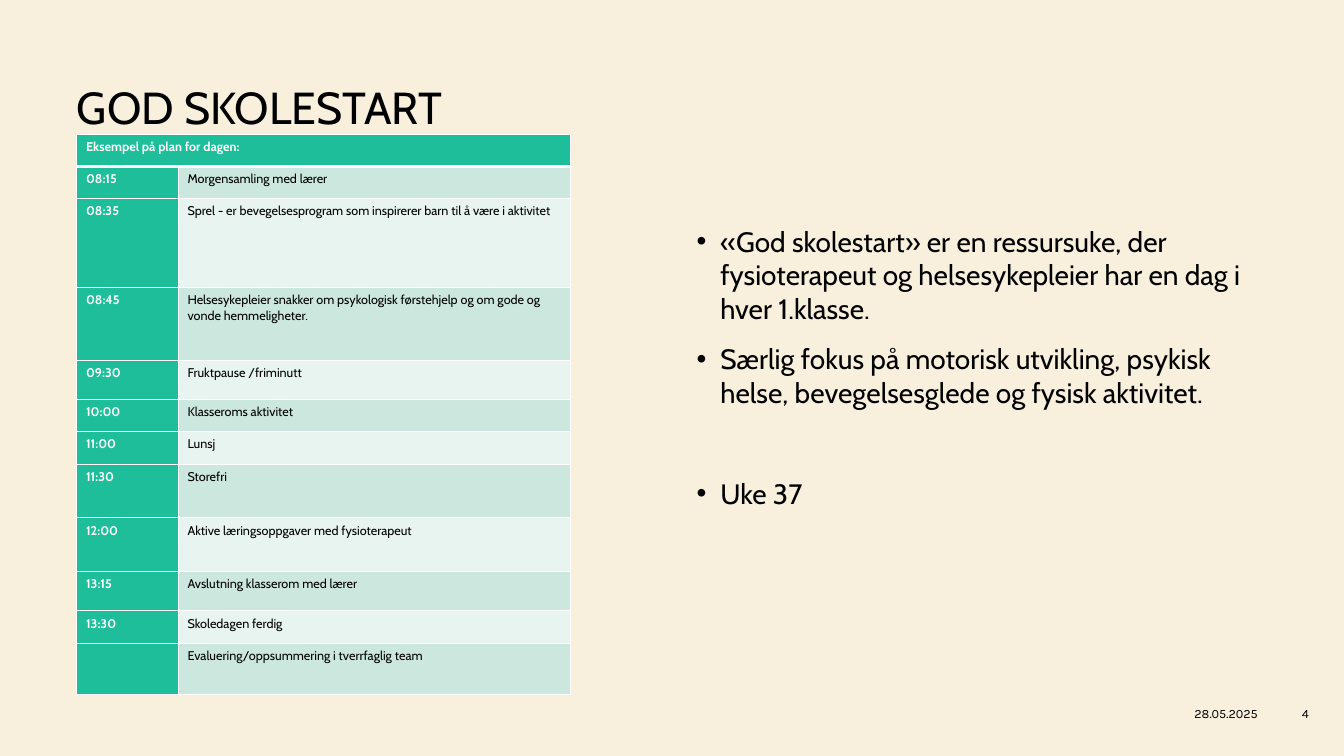
from dataclasses import dataclass

from lxml.etree import SubElement
from pptx import Presentation
from pptx.dml.color import RGBColor
from pptx.enum.text import MSO_ANCHOR, PP_ALIGN
from pptx.oxml.ns import qn
from pptx.slide import Slide
from pptx.table import _Cell
from pptx.text.text import TextFrame, _Paragraph
from pptx.util import Pt

CREAM = RGBColor(0xF8, 0xF0, 0xDD)
GREEN = RGBColor(0x1E, 0xBE, 0x9B)
MINT = RGBColor(0xCC, 0xE8, 0xDE)
PALE_MINT = RGBColor(0xE7, 0xF4, 0xEF)
BLACK = RGBColor(0, 0, 0)
WHITE = RGBColor(0xFF, 0xFF, 0xFF)
BODY_FONT = "Cabin"
FOOTER_FONT = "Karla"
THIN, THICK = 0.8, 2.4


@dataclass(frozen=True)
class Activity:
    time: str
    text: str
    height: float


@dataclass(frozen=True)
class Bullet:
    text: str
    space_before: float


@dataclass(frozen=True)
class FooterItem:
    text: str
    left: float
    width: float
    align: PP_ALIGN


HEADER_HEIGHT = 23
COLUMN_WIDTHS = (72.5, 280)
ACTIVITIES = (
    Activity("08:15", "Morgensamling med lærer", 23),
    Activity("08:35", "Sprel - er bevegelsesprogram som inspirerer barn til å være i aktivitet", 63.5),
    # Non-breaking spaces keep the last four words on one line
    Activity("08:45", "Helsesykepleier snakker om psykologisk førstehjelp og om "
                      "gode og vonde hemmeligheter.", 52),
    Activity("09:30", "Fruktpause /friminutt", 28),
    Activity("10:00", "Klasseroms aktivitet", 23),
    Activity("11:00", "Lunsj", 23),
    Activity("11:30", "Storefri", 38.5),
    Activity("12:00", "Aktive læringsoppgaver med fysioterapeut", 38.5),
    Activity("13:15", "Avslutning klasserom med lærer", 28),
    Activity("13:30", "Skoledagen ferdig", 23),
    Activity("", "Evaluering/oppsummering i tverrfaglig team", 36.5),
)
BULLETS = (
    Bullet("«God skolestart» er en ressursuke, der fysioterapeut og helsesykepleier "
           "har en dag i hver 1.klasse.", 0),
    Bullet("Særlig fokus på motorisk utvikling, psykisk helse, bevegelsesglede og "
           "fysisk aktivitet.", 12),
    Bullet("Uke 37", 48),
)
FOOTER = (
    FooterItem("28.05.2025", 799.5, 106, PP_ALIGN.RIGHT),
    FooterItem("4", 905, 55, PP_ALIGN.CENTER),
)


def write(para: _Paragraph, text: str, *, size: float, font: str = BODY_FONT,
          color: RGBColor = BLACK, bold: bool = False,
          align: PP_ALIGN = PP_ALIGN.LEFT) -> None:
    para.alignment = align
    para.font.size = Pt(size)
    if not text:
        return
    span = para.add_run()
    span.text = text
    span.font.name = font
    span.font.size = Pt(size)
    span.font.bold = bold
    span.font.color.rgb = color


def remove_margins(frame: TextFrame) -> None:
    frame.margin_left = frame.margin_right = frame.margin_top = frame.margin_bottom = 0
    frame.word_wrap = True
    frame.vertical_anchor = MSO_ANCHOR.TOP


def add_bullet(para: _Paragraph) -> None:
    properties = para._p.get_or_add_pPr()
    properties.set("marL", str(Pt(17)))
    properties.set("indent", str(Pt(-17)))
    SubElement(properties, qn("a:buFont"), typeface="Arial")
    SubElement(properties, qn("a:buChar"), char="•")


def set_borders(cell: _Cell, *, top: float = THIN, bottom: float = THIN) -> None:
    properties = cell._tc.get_or_add_tcPr()
    widths = {"a:lnL": THIN, "a:lnR": THIN, "a:lnT": top, "a:lnB": bottom}
    for index, (tag, width) in enumerate(widths.items()):
        line = SubElement(properties, qn(tag), w=str(Pt(width)))
        SubElement(SubElement(line, qn("a:solidFill")), qn("a:srgbClr"), val=str(WHITE))
        properties.insert(index, line)


def fill_cell(cell: _Cell, text: str, *, fill: RGBColor, color: RGBColor = WHITE,
              bold: bool = True, top: float = THIN, bottom: float = THIN) -> None:
    cell.fill.solid()
    cell.fill.fore_color.rgb = fill
    cell.margin_left = cell.margin_right = Pt(6.5)
    set_borders(cell, top=top, bottom=bottom)
    write(cell.text_frame.paragraphs[0], text, size=9, color=color, bold=bold)


def add_title(page: Slide) -> None:
    title = page.shapes.title
    title.left, title.top, title.width, title.height = Pt(55), Pt(57), Pt(850), Pt(103)
    remove_margins(title.text_frame)
    write(title.text_frame.paragraphs[0], "GOD SKOLESTART", size=32)


def add_plan(page: Slide) -> None:
    heights = [HEADER_HEIGHT] + [activity.height for activity in ACTIVITIES]
    table = page.shapes.add_table(len(heights), len(COLUMN_WIDTHS), Pt(55), Pt(96),
                                  Pt(sum(COLUMN_WIDTHS)), Pt(sum(heights))).table
    table.first_col = True
    for column, width in zip(table.columns, COLUMN_WIDTHS):
        column.width = Pt(width)
    for row, height in zip(table.rows, heights):
        row.height = Pt(height)

    # Header across both columns
    header, header_end = table.cell(0, 0), table.cell(0, 1)
    header.merge(header_end)
    fill_cell(header, "Eksempel på plan for dagen:", fill=GREEN, bottom=THICK)
    fill_cell(header_end, "", fill=GREEN, bottom=THICK)

    # Times and activities, in alternating shades
    for index, activity in enumerate(ACTIVITIES, start=1):
        top = THICK if index == 1 else THIN
        shade = MINT if index % 2 else PALE_MINT
        fill_cell(table.cell(index, 0), activity.time, fill=GREEN, top=top)
        fill_cell(table.cell(index, 1), activity.text, fill=shade, color=BLACK,
                  bold=False, top=top)


def add_bullets(page: Slide) -> None:
    frame = page.shapes.add_textbox(Pt(497.5), Pt(160), Pt(408), Pt(320)).text_frame
    remove_margins(frame)
    for index, bullet in enumerate(BULLETS):
        para = frame.add_paragraph() if index else frame.paragraphs[0]
        add_bullet(para)
        if bullet.space_before:
            para.space_before = Pt(bullet.space_before)
        write(para, bullet.text, size=20)


def add_footer(page: Slide) -> None:
    for item in FOOTER:
        box = page.shapes.add_textbox(Pt(item.left), Pt(495), Pt(item.width), Pt(29))
        box.text_frame.word_wrap = True
        box.text_frame.vertical_anchor = MSO_ANCHOR.MIDDLE
        write(box.text_frame.paragraphs[0], item.text, size=9, font=FOOTER_FONT,
              align=item.align)


def main() -> None:
    deck = Presentation()
    deck.slide_width, deck.slide_height = Pt(960), Pt(540)
    page = deck.slides.add_slide(deck.slide_layouts[5])
    page.background.fill.solid()
    page.background.fill.fore_color.rgb = CREAM
    add_title(page)
    add_plan(page)
    add_bullets(page)
    add_footer(page)
    deck.save("out.pptx")


if __name__ == "__main__":
    main()
